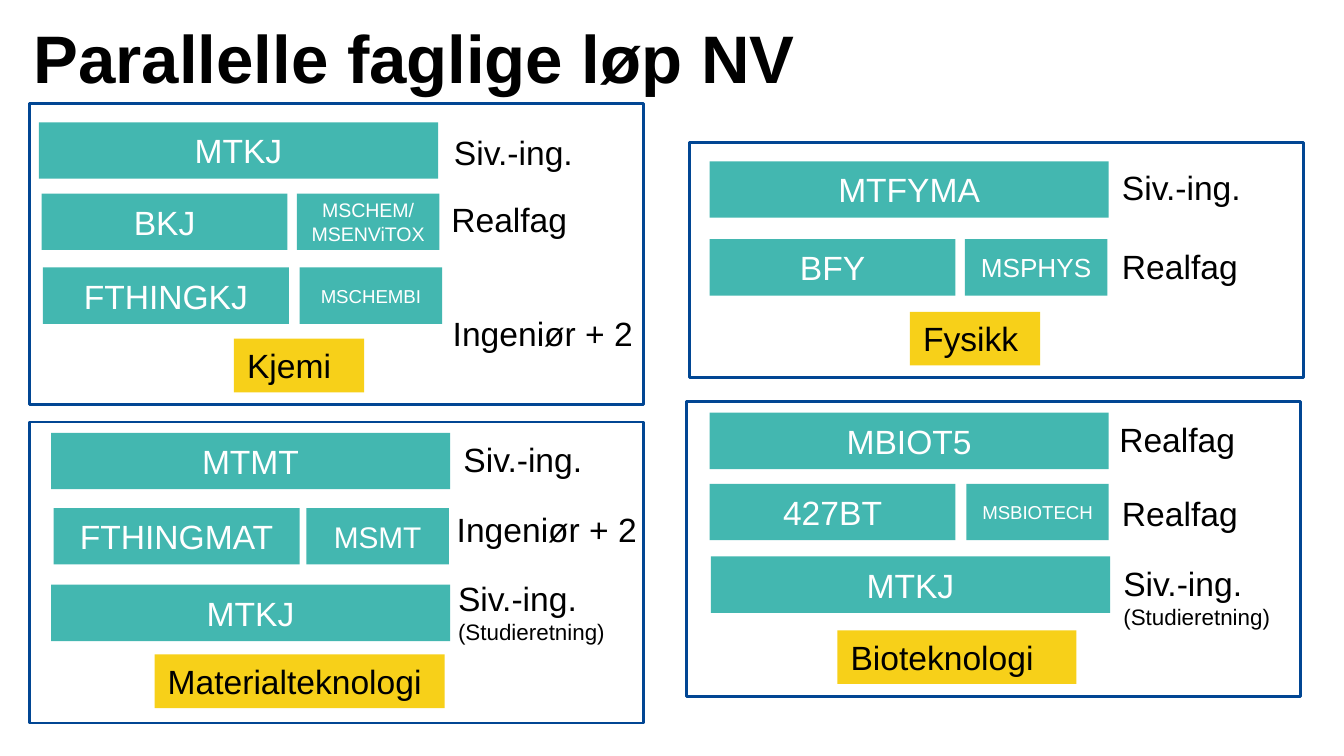
from dataclasses import dataclass

from pptx import Presentation
from pptx import util as u
from pptx.dml.color import RGBColor
from pptx.enum import shapes, text


@dataclass(frozen=True)
class Theme:
    font: str = "Arial"
    black: str = "000000"
    white: str = "FFFFFF"
    teal: str = "43B7B0"
    yellow: str = "F7D019"
    blue: str = "014693"
    title_size: float = 36
    body_size: float = 18
    note_size: float = 12
    border: float = 1.5


BAR_HEIGHT = 0.42
LABEL_HEIGHT = 0.4
NOTE_HEIGHT = 0.21
FULL, LONG, SHORT = 2.97, 1.83, 1.06  # bar widths: whole run, bachelor, master
PANEL_WIDTH = 4.57


class Slide:
    """Holds the theme and the current slide."""

    def __init__(self, s, theme):
        self.s = s
        self.theme = theme

    def add_run(self, p, words, size, color, bold=False):
        r = p.add_run()
        r.text = words
        r.font.name = self.theme.font
        r.font.size = u.Pt(size)
        r.font.bold = bold
        r.font.color.rgb = RGBColor.from_string(color)

    def rect(self, x, y, w, h, fill=None, line=None):
        sp = self.s.shapes.add_shape(
            shapes.MSO_SHAPE.RECTANGLE, *map(u.Inches, (x, y, w, h)))
        sp.shadow.inherit = False
        if fill:
            sp.fill.solid()
            sp.fill.fore_color.rgb = RGBColor.from_string(fill)
        else:
            sp.fill.background()
        if line:
            sp.line.color.rgb = RGBColor.from_string(line)
            sp.line.width = u.Pt(self.theme.border)
        else:
            sp.line.fill.background()
        return sp

    def title(self, words, x, y, w, h):
        sp = self.s.shapes.title
        sp.left, sp.top, sp.width, sp.height = map(u.Inches, (x, y, w, h))
        tf = sp.text_frame
        tf.word_wrap = True
        tf.vertical_anchor = text.MSO_ANCHOR.TOP
        tf.auto_size = text.MSO_AUTO_SIZE.SHAPE_TO_FIT_TEXT
        p = tf.paragraphs[0]
        p.alignment = text.PP_ALIGN.LEFT
        self.add_run(p, words, self.theme.title_size, self.theme.black, bold=True)

    def panel(self, x, y, h, fill=None):
        self.rect(x, y, PANEL_WIDTH, h, fill, self.theme.blue)

    def bar(self, words, x, y, w, size=None):
        sp = self.rect(x, y, w, BAR_HEIGHT, self.theme.teal)
        tf = sp.text_frame
        tf.word_wrap = True
        tf.vertical_anchor = text.MSO_ANCHOR.MIDDLE
        p = tf.paragraphs[0]
        p.alignment = text.PP_ALIGN.CENTER
        self.add_run(p, words, size or self.theme.body_size, self.theme.white)

    def top_text(self, sp, words, note=None):
        """Fill a shape with left-aligned text and an optional small second line."""
        tf = sp.text_frame
        tf.word_wrap = True
        tf.vertical_anchor = text.MSO_ANCHOR.TOP
        tf.auto_size = text.MSO_AUTO_SIZE.SHAPE_TO_FIT_TEXT
        p = tf.paragraphs[0]
        p.alignment = text.PP_ALIGN.LEFT
        self.add_run(p, words, self.theme.body_size, self.theme.black)
        if note:
            p = tf.add_paragraph()
            p.alignment = text.PP_ALIGN.LEFT
            self.add_run(p, note, self.theme.note_size, self.theme.black)

    def subject(self, words, x, y, w):
        sp = self.rect(x, y, w, LABEL_HEIGHT, self.theme.yellow)
        self.top_text(sp, words)

    def label(self, words, x, y, w, note=None):
        h = LABEL_HEIGHT + (NOTE_HEIGHT if note else 0)
        sp = self.s.shapes.add_textbox(*map(u.Inches, (x, y, w, h)))
        self.top_text(sp, words, note)


THEME = Theme()
NOTE = "(Studieretning)"

# panel: x, y, height[, fill]; bars: text, x, y, width[, size]
# subject: text, x, y, width; labels: text, x, y, width[, note]
GROUPS = [
    dict(panel=(0.22, 0.77, 2.24),
         bars=[("MTKJ", 0.29, 0.91, FULL),
               ("BKJ", 0.31, 1.44, LONG),
               ("MSCHEM/ MSENViTOX", 2.21, 1.44, SHORT, 10.5),
               ("FTHINGKJ", 0.32, 1.99, LONG),
               ("MSCHEMBI", 2.23, 1.99, SHORT, 10)],
         subject=("Kjemi", 1.74, 2.52, 0.97),
         labels=[("Siv.-ing.", 3.28, 0.93, 1.2),
                 ("Realfag", 3.26, 1.43, 1.22),
                 ("Ingeniør + 2", 3.27, 2.28, 1.92)]),
    dict(panel=(5.13, 1.06, 1.75),
         bars=[("MTFYMA", 5.28, 1.2, FULL),
               ("BFY", 5.28, 1.78, LONG),
               ("MSPHYS", 7.18, 1.78, SHORT, 14)],
         subject=("Fysikk", 6.77, 2.32, 0.97),
         labels=[("Siv.-ing.", 8.25, 1.19, 1.2),
                 ("Realfag", 8.25, 1.78, 1.06)]),
    dict(panel=(0.22, 3.14, 2.24, THEME.white),
         bars=[("MTMT", 0.38, 3.22, FULL),
               ("FTHINGMAT", 0.4, 3.78, LONG),
               ("MSMT", 2.28, 3.78, SHORT, 16),
               ("MTKJ", 0.38, 4.35, FULL)],
         subject=("Materialteknologi", 1.15, 4.87, 2.16),
         labels=[("Siv.-ing.", 3.35, 3.22, 1.2),
                 ("Ingeniør + 2", 3.3, 3.74, 1.92),
                 ("Siv.-ing.", 3.31, 4.25, 1.42, NOTE)]),
    dict(panel=(5.11, 2.99, 2.19),
         bars=[("MBIOT5", 5.28, 3.07, FULL),
               ("427BT", 5.28, 3.6, LONG),
               ("MSBIOTECH", 7.19, 3.6, SHORT, 10),
               ("MTKJ", 5.29, 4.14, FULL)],
         subject=("Bioteknologi", 6.23, 4.69, 1.78),
         labels=[("Realfag", 8.23, 3.07, 1.16),
                 ("Realfag", 8.25, 3.62, 1.2),
                 ("Siv.-ing.", 8.26, 4.14, 1.42, NOTE)]),
]


def main():
    prs = Presentation()
    prs.slide_width = u.Inches(10)
    prs.slide_height = u.Inches(10 * 9 / 16)
    slide = Slide(prs.slides.add_slide(prs.slide_layouts.get_by_name("Title Only")), THEME)
    slide.title("Parallelle faglige løp NV", 0.15, 0.07, 7.85, 0.69)
    for group in GROUPS:
        slide.panel(*group["panel"])
        for bar in group["bars"]:
            slide.bar(*bar)
        slide.subject(*group["subject"])
        for label in group["labels"]:
            slide.label(*label)
    prs.save("out.pptx")


if __name__ == "__main__":
    main()
